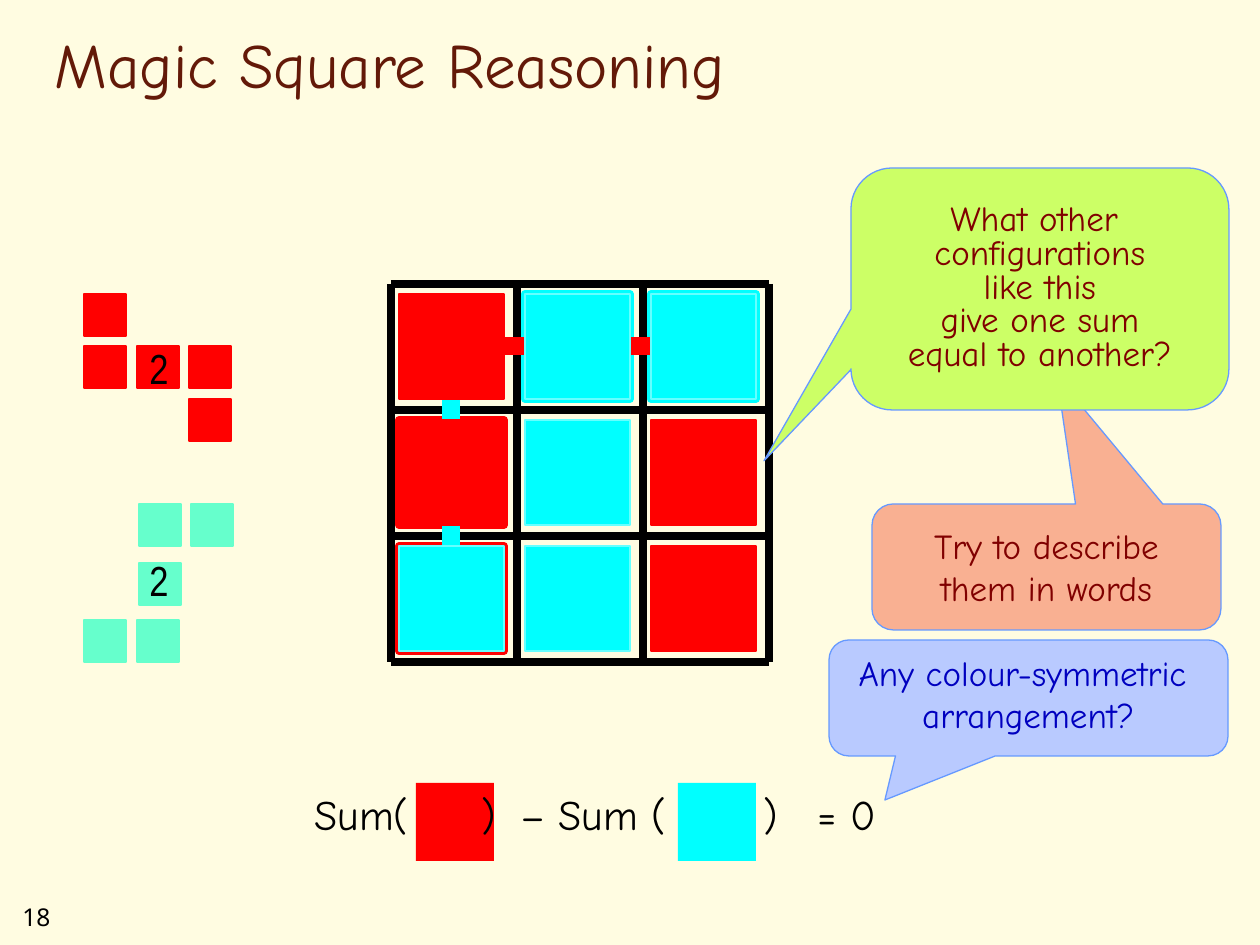
"""Build the Magic Square Reasoning slide."""
from lxml.etree import SubElement
from pptx import Presentation
from pptx.dml.color import RGBColor
from pptx.enum.shapes import MSO_CONNECTOR as Connector, MSO_SHAPE as Shape
from pptx.enum.text import MSO_ANCHOR as Anchor, PP_ALIGN as Align
from pptx.oxml.ns import qn
from pptx.util import Emu, Pt

PX = 914400 / 126
CREAM = RGBColor(0xFF, 0xFC, 0xE1)
BROWN = RGBColor(0x63, 0x19, 0x08)
MAROON = RGBColor(0x80, 0x00, 0x00)
BLACK = RGBColor(0x00, 0x00, 0x00)
RED = RGBColor(0xFF, 0x00, 0x00)
CYAN = RGBColor(0x00, 0xFF, 0xFF)
PALE_CYAN = RGBColor(0x66, 0xFF, 0xFF)
MINT = RGBColor(0x66, 0xFF, 0xCC)
SALMON = RGBColor(0xF9, 0xB0, 0x92)
LIME = RGBColor(0xCC, 0xFF, 0x66)
PERIWINKLE = RGBColor(0xB9, 0xCA, 0xFF)
OUTLINE = RGBColor(0x66, 0x99, 0xFF)
NAVY = RGBColor(0x00, 0x00, 0xBF)
FONT = "Comic Neue"

TITLE = "Magic Square Reasoning"
GRID_LEFT, GRID_TOP, PITCH = 391, 284, 126
CELL, CELL_INSET = 105, 9
COLOURING = ["RCC", "RCR", "CCR"]
FRAMED_CELLS = [(1, 0, CYAN), (2, 0, CYAN), (0, 1, RED), (0, 2, RED)]
LINKS = [(409, 346, 746, 346, RED), (451, 305, 451, 630, CYAN)]

SMALL = 42
SMALL_SQUARES = [
    (RED, [(84, 294), (84, 346), (137, 346), (189, 346), (189, 399)]),
    (MINT, [(139, 504), (191, 504), (139, 563), (84, 620), (137, 620)]),
]
CENTRE_NUMBERS = [("2", 137, 336), ("2", 137, 548)]

FORMULA_SQUARE = 78
FORMULA_SQUARES = [(416, RED), (678, CYAN)]
FORMULA_TEXTS = [
    ("Sum(", 302, 189), (")", 469, 50), ("–", 508, 78),
    ("Sum (", 546, 160), (")", 751, 50), ("= 0", 805, 140),
]

CALLOUTS = [
    ("Try to describe\nthem in words", (872, 504, 349, 126), (0.03, -1.51, 0.17),
     SALMON, dict(color=MAROON, anchor=Anchor.MIDDLE, wrap=False)),
    ("What other \nconfigurations\nlike this\ngive one sum\nequal to another?",
     (851, 168, 378, 242), (-0.73, 0.71, 0.17),
     LIME, dict(color=MAROON, anchor=Anchor.MIDDLE, wrap=False, spacing=0.8)),
    ("Any colour-symmetric \narrangement?", (829, 640, 399, 116), (-0.36, 0.88, 0.17),
     PERIWINKLE, dict(color=NAVY)),
]


def px(*lengths):
    return [Emu(round(length * PX)) for length in lengths]


def write(shape, text, size=24, font=FONT, color=BLACK, align=Align.LEFT,
          anchor=Anchor.TOP, wrap=True, spacing=None):
    frame = shape.text_frame
    frame.word_wrap = wrap
    frame.vertical_anchor = anchor
    paragraph = frame.paragraphs[0]
    paragraph.text = text.replace("\n", "\v")
    paragraph.alignment = align
    paragraph.line_spacing = spacing
    for run in paragraph.runs:
        run.font.size = Pt(size)
        run.font.name = font
        run.font.color.rgb = color


def add_text(slide, text, box, **style):
    write(slide.shapes.add_textbox(*px(*box)), text, **style)


def add_box(slide, box, fill, line=None, width=0.75, kind=Shape.RECTANGLE):
    shape = slide.shapes.add_shape(kind, *px(*box))
    shape.shadow.inherit = False
    shape.fill.solid()
    shape.fill.fore_color.rgb = fill
    if line is None:
        shape.line.fill.background()
    else:
        shape.line.color.rgb = line
        shape.line.width = Pt(width)
    return shape


def add_line(slide, ends, color, width):
    line = slide.shapes.add_connector(Connector.STRAIGHT, *px(*ends))
    line.line.color.rgb = color
    line.line.width = Pt(width)
    SubElement(line._element.spPr, qn("a:effectLst"))


def cell_box(column, row):
    return (GRID_LEFT + column * PITCH + CELL_INSET - 1,
            GRID_TOP + row * PITCH + CELL_INSET + 1, CELL, CELL)


def add_magic_square(slide):
    right, bottom = GRID_LEFT + 3 * PITCH, GRID_TOP + 3 * PITCH
    for step in range(4):
        x, y = GRID_LEFT + step * PITCH, GRID_TOP + step * PITCH
        add_line(slide, (x, GRID_TOP, x, bottom), BLACK, 4.5)
        add_line(slide, (GRID_LEFT, y, right, y), BLACK, 4.5)
    for column, row, color in FRAMED_CELLS:
        add_box(slide, cell_box(column, row), color, color, 4.5)
    for *ends, color in LINKS:
        add_line(slide, ends, color, 10)
    for row, letters in enumerate(COLOURING):
        for column, letter in enumerate(letters):
            fill, line = (RED, RED) if letter == "R" else (CYAN, PALE_CYAN)
            add_box(slide, cell_box(column, row), fill, line)


def add_small_patterns(slide):
    for color, corners in SMALL_SQUARES:
        for left, top in corners:
            add_box(slide, (left, top, SMALL, SMALL), color, color)
    for text, left, top in CENTRE_NUMBERS:
        add_text(slide, text, (left, top, 53, 63), font="Arial Narrow")


def add_formula(slide):
    for left, color in FORMULA_SQUARES:
        add_box(slide, (left, 783, FORMULA_SQUARE, FORMULA_SQUARE), color)
    for text, left, width in FORMULA_TEXTS:
        add_text(slide, text, (left, 782, width, 64))


def add_callouts(slide):
    for text, box, adjustments, fill, style in CALLOUTS:
        callout = add_box(slide, box, fill, OUTLINE, kind=Shape.ROUNDED_RECTANGULAR_CALLOUT)
        for index, value in enumerate(adjustments):
            callout.adjustments[index] = value
        write(callout, text, size=20, align=Align.CENTER, **style)


def main():
    presentation = Presentation()
    presentation.slide_width, presentation.slide_height = px(1260, 945)
    slide = presentation.slides.add_slide(presentation.slide_layouts[5])
    slide.background.fill.solid()
    slide.background.fill.fore_color.rgb = CREAM
    title = slide.shapes.title
    title.left, title.top, title.width, title.height = px(42, 21, 1071, 84)
    write(title, TITLE, size=36, color=BROWN, anchor=Anchor.MIDDLE)
    add_text(slide, "18", (10, 896, 95, 43), size=14, font="Noto Sans")
    add_magic_square(slide)
    add_formula(slide)
    add_small_patterns(slide)
    add_callouts(slide)
    presentation.save("out.pptx")


if __name__ == "__main__":
    main()
